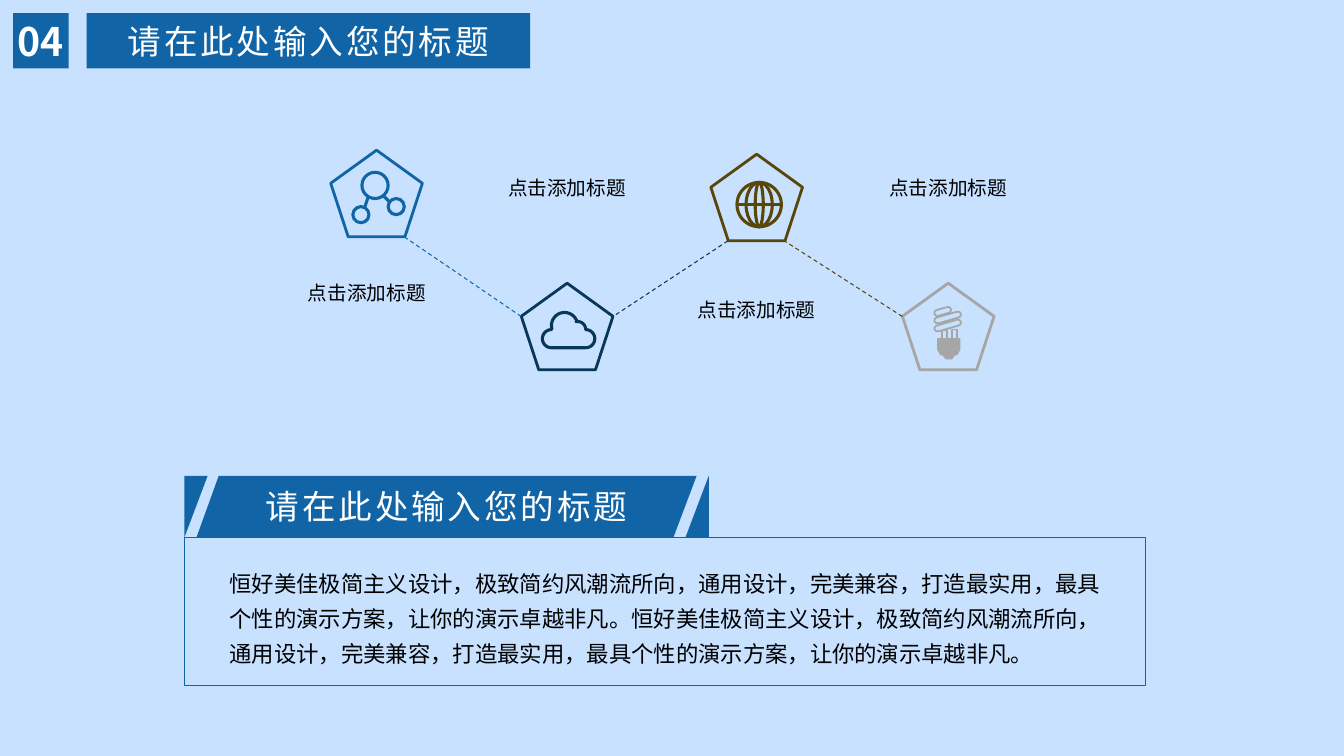
"""Builds a slide with four linked pentagons above a titled text panel."""
from math import cos, radians, sin

from lxml.etree import SubElement
from pptx import Presentation
from pptx.dml.color import RGBColor
from pptx.enum.dml import MSO_LINE
from pptx.enum.shapes import MSO_CONNECTOR, MSO_SHAPE
from pptx.enum.text import MSO_ANCHOR, MSO_AUTO_SIZE, PP_ALIGN
from pptx.oxml.ns import qn
from pptx.util import Inches, Pt

BACKGROUND, BLUE, NAVY, OLIVE, GRAY = "C7E1FF", "1165A6", "093759", "594709", "A6A6A6"
WHITE, BLACK = "FFFFFF", "000000"
CJK = "Noto Sans CJK SC"
ICON_LINE, BULB_LINE = 2.2, 1.25

TITLE = "请在此处输入您的标题"
LABEL = "点击添加标题"
BODY = ("恒好美佳极简主义设计，极致简约风潮流所向，通用设计，完美兼容，打造最实用，最具个性的演示方案，"
        "让你的演示卓越非凡。恒好美佳极简主义设计，极致简约风潮流所向，通用设计，完美兼容，打造最实用，"
        "最具个性的演示方案，让你的演示卓越非凡。")

PENTAGON_SIZE = (0.91, 0.86)
PENTAGONS = {"molecule": (3.28, 1.49, BLUE), "cloud": (5.17, 2.81, NAVY),
             "globe": (7.05, 1.53, OLIVE), "bulb": (8.95, 2.81, GRAY)}
CORNERS = {"left": (0, 0.33), "right": (0.91, 0.33),
           "lower left": (0.17, 0.86), "lower right": (0.73, 0.86)}
LINKS = [("molecule", "lower right", "cloud", "left", BLUE),
         ("globe", "lower left", "cloud", "right", NAVY),
         ("bulb", "left", "globe", "lower right", OLIVE)]
LABEL_BOXES = [(2.67, 2.74, 1.94, 0.34), (4.56, 1.7, 2.13, 0.34),
               (6.44, 2.91, 2.13, 0.34), (8.34, 1.7, 2.13, 0.34)]

MOLECULE_ATOMS = [(3.72, 1.84, 0.13), (3.58, 2.13, 0.08), (3.93, 2.05, 0.08)]
MOLECULE_BONDS = [((3.65, 1.96), (3.62, 2.05)), ((3.81, 1.95), (3.86, 2))]
GLOBE_CENTER, GLOBE_RADIUS = (7.53, 2.03), 0.22
MERIDIAN_RADII = [0.22, 0.13, 0.04]
CLOUD_ARCS = [(5.47, 3.36, 0.09, 90, 265), (5.6, 3.23, 0.13, 165, 335),
              (5.73, 3.27, 0.08, 260, 360), (5.81, 3.36, 0.09, 274, 450)]
BULB_COILS = [(9.35, 3.09, 0.17), (9.4, 3.15, 0.27), (9.4, 3.23, 0.27)]
BULB_TUBES = [(9.34, 3.28, 0.05, 0.08), (9.44, 3.27, 0.05, 0.09)]
BULB_BASE = [(9.3, 3.36), (9.52, 3.36), (9.52, 3.47), (9.49, 3.52), (9.47, 3.52),
             (9.44, 3.56), (9.38, 3.56), (9.35, 3.52), (9.33, 3.52), (9.3, 3.47)]
BANNER = [[(1.83, 4.72), (2.06, 4.72), (1.83, 5.33)],
          [(2.17, 4.72), (6.91, 4.72), (6.68, 5.33), (1.95, 5.33)],
          [(7.03, 4.72), (7.03, 5.33), (6.8, 5.33)]]

TITLE_FORMAT = {"size": Pt(24), "name": CJK}
NUMBER_FORMAT = {"size": Pt(28), "name": CJK, "bold": True}
LABEL_FORMAT = {"size": Pt(14), "name": "Arial"}
BODY_FORMAT = {"size": Pt(16), "name": CJK}
CENTERED = {"alignment": PP_ALIGN.CENTER}
BODY_PARAGRAPH = {"line_spacing": 1.3, "space_before": Pt(6), "space_after": Pt(6)}
MIDDLE = {"word_wrap": True, "vertical_anchor": MSO_ANCHOR.MIDDLE}
NO_MARGINS = {f"margin_{side}": 0 for side in ("left", "top", "right", "bottom")}
GROWING = {"word_wrap": True, "auto_size": MSO_AUTO_SIZE.SHAPE_TO_FIT_TEXT}


def apply(target, values):
    for key, value in values.items():
        setattr(target, key, value)


def paint(color_format, hex_color):
    color_format.rgb = RGBColor.from_string(hex_color)


def style(shape, fill=None, line=None, width=0.75):
    shape.shadow.inherit = False
    if fill:
        shape.fill.solid()
        paint(shape.fill.fore_color, fill)
    else:
        shape.fill.background()
    if line:
        paint(shape.line.color, line)
        shape.line.width = Pt(width)
    else:
        shape.line.fill.background()
    return shape


def add_preset(preset, box, **look):
    return style(slide.shapes.add_shape(preset, *map(Inches, box)), **look)


def add_ring(x, y, rx, ry, color):
    add_preset(MSO_SHAPE.OVAL, (x - rx, y - ry, 2 * rx, 2 * ry), line=color, width=ICON_LINE)


def add_outline(contours, **look):
    first, *others = [[(Inches(x), Inches(y)) for x, y in contour] for contour in contours]
    builder = slide.shapes.build_freeform(*first[0])
    builder.add_line_segments(first[1:])
    for contour in others:
        builder.move_to(*contour[0])
        builder.add_line_segments(contour[1:])
    return style(builder.convert_to_shape(), **look)


def add_line(start, end, color, width, dash=None):
    line = slide.shapes.add_connector(MSO_CONNECTOR.STRAIGHT, *map(Inches, (*start, *end)))
    paint(line.line.color, color)
    line.line.width = Pt(width)
    line.line.dash_style = dash
    SubElement(line._element.spPr, qn("a:effectLst"))


def write(shape, text, color, font, paragraph_format, frame_format, spacing=None):
    apply(shape.text_frame, frame_format)
    paragraph = shape.text_frame.paragraphs[0]
    apply(paragraph, paragraph_format)
    run = paragraph.add_run()
    run.text = text
    apply(run.font, font)
    paint(run.font.color, color)
    properties = run._r.get_or_add_rPr()
    SubElement(properties, qn("a:ea")).set("typeface", CJK)
    if spacing:
        properties.set("spc", str(spacing * 100))


def add_text(box, *content):
    write(slide.shapes.add_textbox(*map(Inches, box)), *content)


def corner(name, position):
    return tuple(a + b for a, b in zip(PENTAGONS[name], CORNERS[position]))


def draw_icons():
    for x, y, radius in MOLECULE_ATOMS:
        add_ring(x, y, radius, radius, BLUE)
    for start, end in MOLECULE_BONDS:
        add_line(start, end, BLUE, ICON_LINE)

    x, y = GLOBE_CENTER
    for radius in MERIDIAN_RADII:
        add_ring(x, y, radius, GLOBE_RADIUS, OLIVE)
    add_line((x - GLOBE_RADIUS, y), (x + GLOBE_RADIUS, y), OLIVE, ICON_LINE)

    cloud = [(x + r * cos(radians(first + (last - first) * step / 16)),
              y + r * sin(radians(first + (last - first) * step / 16)))
             for x, y, r, first, last in CLOUD_ARCS for step in range(17)]
    add_outline([cloud], line=NAVY, width=ICON_LINE)

    for x, y, length in BULB_COILS:
        coil = add_preset(MSO_SHAPE.ROUNDED_RECTANGLE, (x - length / 2, y - 0.03, length, 0.06),
                          line=GRAY, width=BULB_LINE)
        coil.adjustments[0] = 0.5
        coil.rotation = -16
    for tube in BULB_TUBES:
        add_preset(MSO_SHAPE.RECTANGLE, tube, line=GRAY, width=BULB_LINE)
    add_outline([BULB_BASE], fill=GRAY, line=GRAY)


presentation = Presentation()
presentation.slide_width, presentation.slide_height = Inches(13.33), Inches(7.5)
slide = presentation.slides.add_slide(presentation.slide_layouts[6])
slide.background.fill.solid()
paint(slide.background.fill.fore_color, BACKGROUND)

for left, top, color in PENTAGONS.values():
    add_preset(MSO_SHAPE.REGULAR_PENTAGON, (left, top, *PENTAGON_SIZE), line=color, width=2)
draw_icons()
for origin, origin_corner, target, target_corner, color in LINKS:
    add_line(corner(origin, origin_corner), corner(target, target_corner), color, 0.75, MSO_LINE.DASH)
for box in LABEL_BOXES:
    add_text(box, LABEL, BLACK, LABEL_FORMAT, CENTERED, GROWING)

banner = add_outline(BANNER, fill=BLUE)
write(banner, TITLE, WHITE, TITLE_FORMAT, CENTERED, MIDDLE, 2)
add_preset(MSO_SHAPE.RECTANGLE, (1.83, 5.33, 9.53, 1.47), line=BLUE, width=1)
add_text((2.18, 5.52, 8.96, 1.15), BODY, BLACK, BODY_FORMAT, BODY_PARAGRAPH, MIDDLE | GROWING)

number = add_preset(MSO_SHAPE.RECTANGLE, (0.13, 0.13, 0.55, 0.55), fill=BLUE)
write(number, "04", WHITE, NUMBER_FORMAT, CENTERED, MIDDLE | NO_MARGINS)
heading = add_preset(MSO_SHAPE.RECTANGLE, (0.86, 0.13, 4.4, 0.55), fill=BLUE)
write(heading, TITLE, WHITE, TITLE_FORMAT, CENTERED, MIDDLE, 2)

presentation.save("out.pptx")
